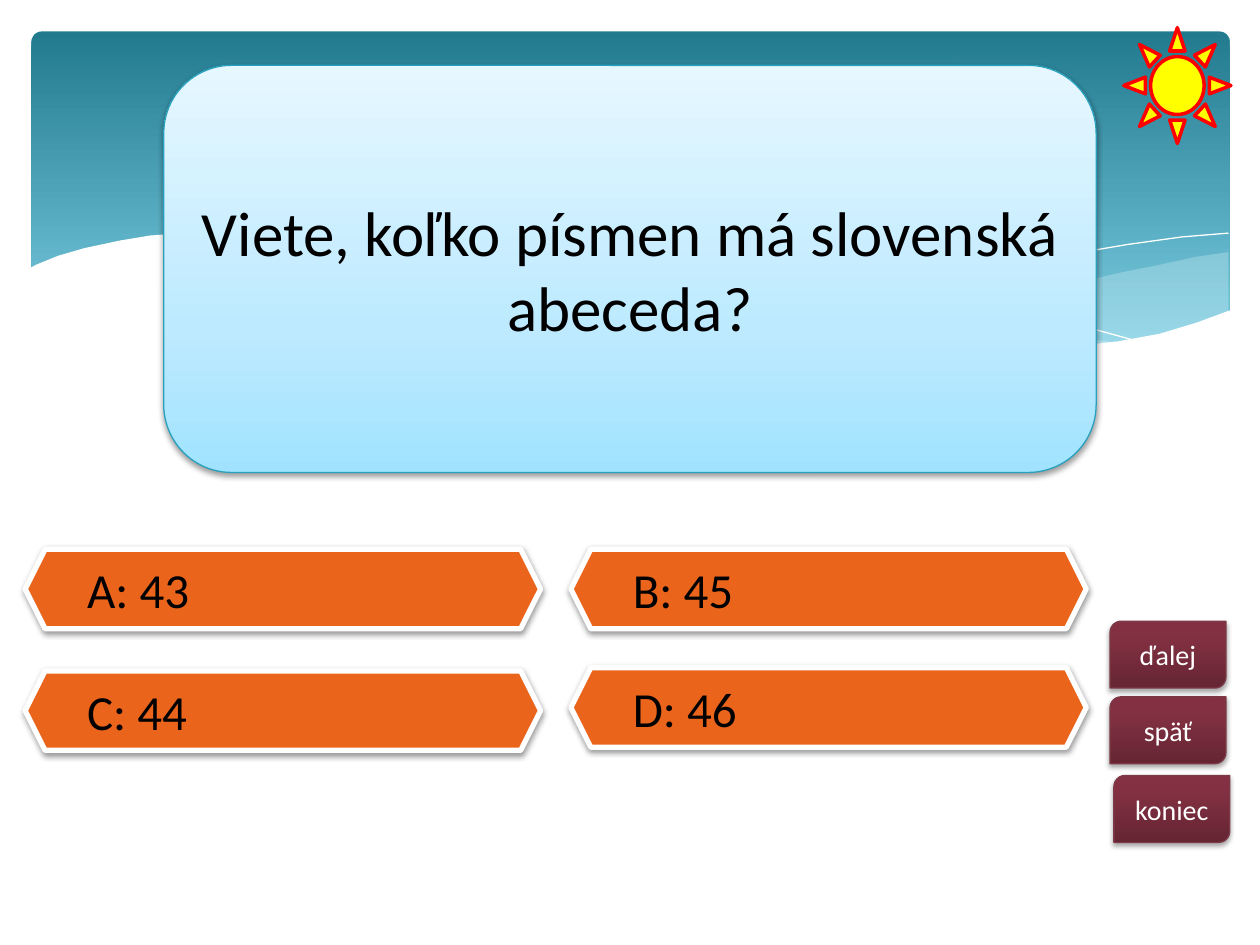
import pptx
import pptx.util
import pptx.dml.color
import pptx.enum.shapes
import pptx.enum.text
import pptx.oxml
import pptx.oxml.ns

Pt = pptx.util.Pt
Kind = pptx.enum.shapes.MSO_SHAPE
Align = pptx.enum.text.PP_ALIGN
NS = 'xmlns:a="http://schemas.openxmlformats.org/drawingml/2006/main"'

FAR = [(702, 144), (682.6, 146.9), (663.1, 151.2), (641.5, 155.5),
       (619.9, 160.6), (579.6, 170.6), (542.2, 178.6), (508.3, 185),
       (475.9, 190.8), (497.5, 193.7), (527, 197.3), (553.7, 199.4),
       (578.2, 200.2), (607.7, 199.4), (634.3, 196.6), (657.4, 192.2),
       (678.2, 186.5), (702, 177.8)]
NEAR = [(643, 196.6), (602.6, 190.8), (558, 182.9), (508.3, 172.8),
        (452.9, 159.8), (409.7, 149.8), (370.1, 142.6), (334.8, 137.5),
        (302.4, 134.6), (259.9, 133.2), (225.4, 135.4), (205.9, 137.5),
        (246.2, 143.3), (290.9, 151.9), (323.3, 159.8), (381.6, 172.8),
        (432.7, 183.6), (478.8, 191.5), (519.8, 197.3), (556.6, 199.4),
        (589, 200.2), (617, 199.4)]
FALL = [(222.5, 140.4), (247.7, 136.8), (288.7, 134.6), (337.7, 136.1),
        (383.8, 139.7), (437.8, 146.9), (500.4, 157.7), (547.2, 167.8),
        (598.3, 180.7), (653, 195.8)]
RISE = [(441.4, 185), (500.4, 169.2), (558.7, 155.5), (601.9, 146.9),
        (644.4, 139.7), (675.4, 135.4), (702, 133.2)]
FRONT = [(703.4, 177.1), (684, 184.3), (662.4, 190.8), (638.6, 195.1),
         (612, 198), (582.5, 199.4), (547.9, 198), (509.8, 194.4),
         (466.6, 188.6), (416.9, 180), (362.2, 167.8), (321.8, 158.4),
         (281.5, 149), (244.8, 141.8), (210.2, 136.8), (180, 133.9),
         (151.9, 132.5), (127.4, 132.5), (105.1, 133.2), (85.7, 134.6),
         (68.4, 137.5), (48.2, 141.8), (33.1, 146.2), (20.9, 151.2),
         (16.6, 153.4), (16.6, 236.9), (703.4, 236.9)]
WINE = [(0, "652533"), (80, "833142"), (100, "852F42")]
SKY = [(0, "A1E3FF"), (35, "BDEAFF"), (100, "E6F7FF")]
TEAL = [(0, "227A8F"), (90, "7ACBE0")]


def color(code):
    """Turn a hex string into a colour."""
    return pptx.dml.color.RGBColor.from_string(code)


def blend(shape, stops, angle):
    """Fill a shape with a gradient, its angle counted anticlockwise."""
    shape.fill.gradient()
    shape.fill.gradient_angle = angle
    tray = shape.element.spPr.find(".//" + pptx.oxml.ns.qn("a:gsLst"))
    for stop in list(tray):
        tray.remove(stop)
    for place, code in stops:
        tray.append(pptx.oxml.parse_xml(
            f'<a:gs {NS} pos="{place * 1000}"><a:srgbClr val="{code}"/></a:gs>'))


def paint(shape, fill=None, line=None, weight=0.75, alpha=None):
    """Set the plain fill and the line of a shape, with no shadow."""
    shape.shadow.inherit = False
    if fill:
        shape.fill.solid()
        shape.fill.fore_color.rgb = color(fill)
    else:
        shape.fill.background()
    if alpha:
        tint = shape.element.spPr.find(".//" + pptx.oxml.ns.qn("a:srgbClr"))
        tint.append(pptx.oxml.parse_xml(f'<a:alpha {NS} val="{alpha * 1000}"/>'))
    if line:
        shape.line.color.rgb = color(line)
        shape.line.width = Pt(weight)
    else:
        shape.line.fill.background()


def shade(shape, alpha=38, drop=1.6):
    """Add a soft shadow straight below a shape."""
    tray = shape.element.spPr.find(pptx.oxml.ns.qn("a:effectLst"))
    tray.append(pptx.oxml.parse_xml(
        f'<a:outerShdw {NS} blurRad="{Pt(3.1)}" dist="{Pt(drop)}" dir="5400000" '
        f'rotWithShape="0"><a:srgbClr val="000000"><a:alpha val="{alpha * 1000}"/>'
        '</a:srgbClr></a:outerShdw>'))


def write(shape, words, size=16, ink="000000", align=Align.CENTER):
    """Put formatted text in the middle of a shape."""
    frame = shape.text_frame
    frame.word_wrap = True
    frame.vertical_anchor = pptx.enum.text.MSO_ANCHOR.MIDDLE
    para = frame.paragraphs[0]
    para.alignment = align
    run = para.add_run()
    run.text = words
    run.font.name = "Calibri"
    run.font.size = Pt(size)
    run.font.color.rgb = color(ink)


def block(slide, kind, left, top, width, height, **look):
    """Add a preset shape and paint it."""
    shape = slide.shapes.add_shape(kind, Pt(left), Pt(top), Pt(width), Pt(height))
    paint(shape, **look)
    return shape


def wave(slide, points, close=True, **look):
    """Draw an outline through the points."""
    spots = [(Pt(x), Pt(y)) for x, y in points]
    pen = slide.shapes.build_freeform(*spots[0])
    pen.add_line_segments(spots[1:], close=close)
    paint(pen.convert_to_shape(), **look)


def button(slide, words, left, top):
    """Add a wine-red button."""
    shape = block(slide, Kind.ROUND_2_DIAG_RECTANGLE, left, top, 66.24, 38.2,
                  line="7C3947")
    blend(shape, WINE, 90)
    shade(shape, alpha=35, drop=1.8)
    write(shape, words, ink="FFFFFF")


def answer(slide, words, left, top):
    """Add an orange answer bar."""
    shape = block(slide, Kind.HEXAGON, left, top, 294.5, 45.4,
                  fill="EB641B", line="FFFFFF", weight=3)
    shade(shape)
    write(shape, words, size=28, align=Align.LEFT)


def scene(slide):
    """Draw the teal banner with its waves."""
    banner = block(slide, Kind.ROUNDED_RECTANGLE, 18, 18, 684.7, 194.4)
    banner.adjustments[0] = 0.03
    blend(banner, TEAL, 270)
    wave(slide, FAR, fill="DEF5FA", alpha=29)
    wave(slide, NEAR, fill="DEF5FA", alpha=40)
    for curve in (FALL, RISE):
        wave(slide, curve, close=False, line="FFFFFF", weight=0)
    wave(slide, FRONT, fill="FFFFFF")


def ask(slide, words):
    """Add the question panel."""
    panel = block(slide, Kind.ROUNDED_RECTANGLE, 93.6, 37.4, 532.8, 232.6,
                  line="28A1BE")
    blend(panel, SKY, 90)
    shade(panel)
    write(panel, words, size=36)


def main():
    """Build and save the quiz slide."""
    deck = pptx.Presentation()
    deck.slide_width, deck.slide_height = Pt(720), Pt(540)
    slide = deck.slides.add_slide(deck.slide_layouts[6])
    scene(slide)
    for words, left, top in [("koniec", 636.5, 443.2), ("späť", 634.3, 398.2),
                             ("ďalej", 634.3, 355)]:
        button(slide, words, left, top)
    block(slide, Kind.SUN, 642.2, 15.8, 61.2, 66.2,
          fill="FFFF00", line="FF0000", weight=2)
    ask(slide, "Viete, koľko písmen má slovenská abeceda?")
    for words, left, top in [("A: 43", 14.4, 313.9), ("B: 45", 326.2, 313.9),
                             ("D: 46", 326.2, 381.6), ("C: 44", 14.4, 383.4)]:
        answer(slide, words, left, top)
    deck.save("out.pptx")


if __name__ == "__main__":
    main()
